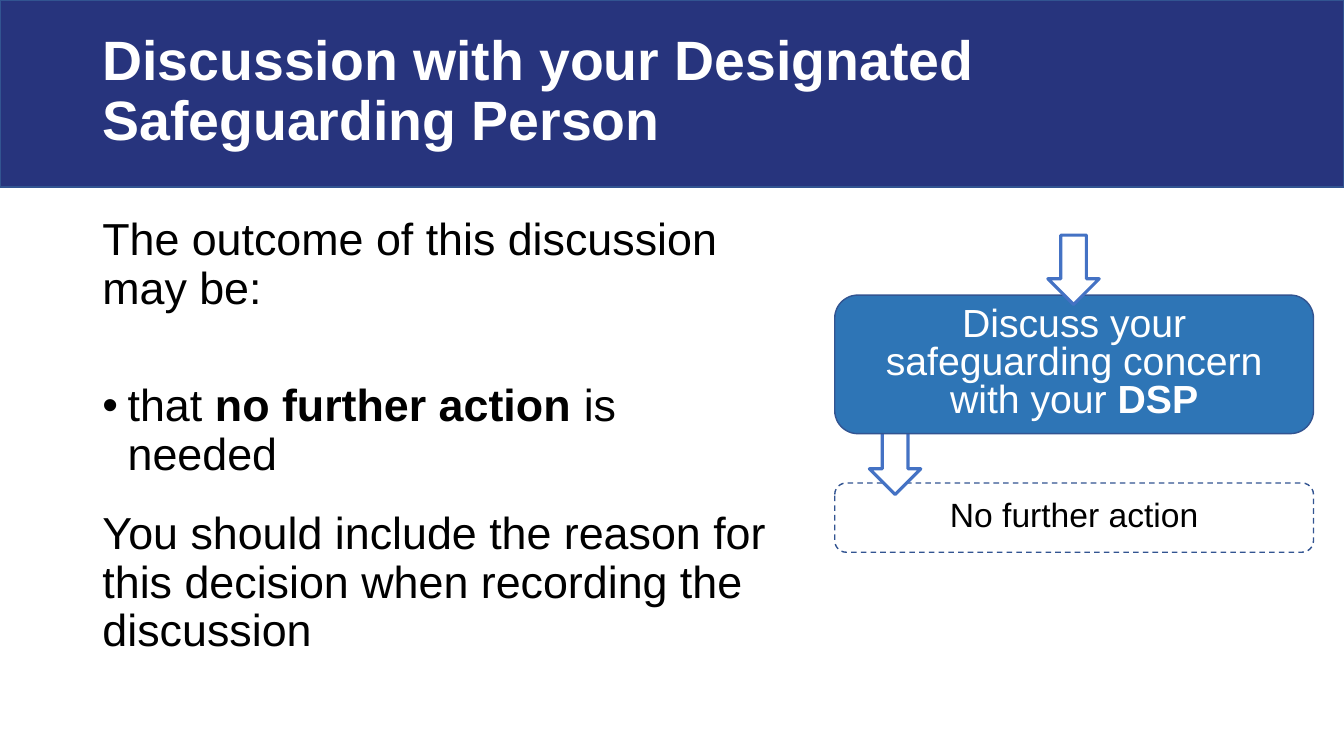
import pptx
import pptx.dml.color
import pptx.enum.dml
import pptx.enum.shapes
import pptx.enum.text
import pptx.util
from lxml import etree
from dataclasses import dataclass

EMU_PER_PX = 9525
SHAPE = pptx.enum.shapes.MSO_SHAPE
ALIGN = pptx.enum.text.PP_ALIGN
ANCHOR = pptx.enum.text.MSO_ANCHOR
DASH = pptx.enum.dml.MSO_LINE


@dataclass(frozen=True)
class Theme:
    font: str = "Arial"
    navy: str = "27347D"
    blue: str = "2E75B6"
    edge: str = "325491"
    arrow_edge: str = "4472C4"
    white: str = "FFFFFF"
    black: str = "000000"
    title_pt: float = 39.6
    body_pt: float = 32
    step_pt: float = 28
    outcome_pt: float = 24


THEME = Theme()


def px(n):
    return pptx.util.Emu(n * EMU_PER_PX)


def rgb(value):
    return pptx.dml.color.RGBColor.from_string(value)


def apply(target, formats):
    for name, value in formats.items():
        setattr(target, name, value)


def place(shape, box):
    apply(shape, dict(zip(("left", "top", "width", "height"), map(px, box))))


def add_shape(s, kind, box, fill, edge, weight=1, dash=None):
    shape = s.shapes.add_shape(kind, *map(px, box))
    shape.shadow.inherit = False
    shape.fill.solid()
    shape.fill.fore_color.rgb = rgb(fill)
    shape.line.color.rgb = rgb(edge)
    apply(shape.line, {"width": pptx.util.Pt(weight), "dash_style": dash})
    return shape


def setup_frame(tf, anchor):
    apply(tf, {"word_wrap": True, "vertical_anchor": anchor,
               "auto_size": pptx.enum.text.MSO_AUTO_SIZE.NONE})


def write(p, runs, size, color, align=ALIGN.LEFT, spacing=0.9, before=0, after=0):
    """Fill a paragraph with (text, bold) runs."""
    apply(p, {"alignment": align, "line_spacing": spacing,
              "space_before": pptx.util.Pt(before), "space_after": pptx.util.Pt(after)})
    for text, bold in runs:
        r = p.add_run()
        r.text = text
        apply(r.font, {"name": THEME.font, "size": pptx.util.Pt(size), "bold": bold})
        r.font.color.rgb = rgb(color)


def set_bullet(p, char=None, indent=0):
    pPr = p._p.get_or_add_pPr()
    pPr.set("marL", str(px(indent)))
    pPr.set("indent", str(px(-indent)))
    tag = pptx.oxml.ns.qn("a:buChar" if char else "a:buNone")
    bullet = etree.SubElement(pPr, tag)
    if char:
        bullet.set("char", char)


def add_header(s, box):
    x, y, w, h = box
    add_shape(s, SHAPE.RECTANGLE, box, THEME.navy, THEME.edge)
    title = s.shapes.title
    place(title, (x + 88, y + 17, 911, 142))
    setup_frame(title.text_frame, ANCHOR.MIDDLE)
    write(title.text_frame.paragraphs[0],
          [("Discussion with your Designated Safeguarding Person", True)],
          THEME.title_pt, THEME.white)
    # Bring the title in front of its banner
    title.element.getparent().append(title.element)


def add_outcomes(s, box):
    x, y, w, h = box
    # Lead-in sentence
    intro = s.shapes.add_textbox(*map(px, (x, y, w, 232)))
    setup_frame(intro.text_frame, ANCHOR.TOP)
    write(intro.text_frame.paragraphs[0],
          [("The outcome of this discussion may be:", False)],
          THEME.body_pt, THEME.black, after=12)

    # Outcome list, starting below the lead-in
    body = s.placeholders[1]
    place(body, (x, y + 77, w, h - 77))
    tf = body.text_frame
    setup_frame(tf, ANCHOR.TOP)
    tf.margin_top = px(86)
    bullet, note = tf.paragraphs[0], tf.add_paragraph()
    write(bullet,
          [("that ", False), ("no further action ", True), ("is needed", False)],
          THEME.body_pt, THEME.black, after=12)
    set_bullet(bullet, "•", 24)
    write(note,
          [("You should include the reason for this decision when recording the discussion",
            False)],
          THEME.body_pt, THEME.black, before=10, after=12)
    set_bullet(note)


def add_flow(s, box):
    x, y, w, h = box

    def add_step(top, height, fill, runs, size, color, dash=None):
        step = add_shape(s, SHAPE.ROUNDED_RECTANGLE, (x, y + top, w, height),
                         fill, THEME.edge, dash=dash)
        setup_frame(step.text_frame, ANCHOR.MIDDLE)
        write(step.text_frame.paragraphs[0], runs, size, color, ALIGN.CENTER, 0.8)

    def add_arrow(left, top):
        add_shape(s, SHAPE.DOWN_ARROW, (x + left, y + top, 49, 66),
                  THEME.white, THEME.arrow_edge, 2.25)

    # Back to front: outcome, its arrow, discussion step, its arrow
    add_step(h - 66, 66, THEME.white, [("No further action", False)],
             THEME.outcome_pt, THEME.black, DASH.DASH)
    add_arrow(33, 181)
    add_step(57, 132, THEME.blue,
             [("Discuss your safeguarding concern with your ", False), ("DSP", True)],
             THEME.step_pt, THEME.white)
    add_arrow(203, 0)


def main():
    prs = pptx.Presentation()
    apply(prs, {"slide_width": px(1280), "slide_height": px(720)})
    s = prs.slides.add_slide(prs.slide_layouts[1])
    add_header(s, (0, 0, 1280, 178))
    add_outcomes(s, (88, 202, 659, 441))
    add_flow(s, (795, 224, 456, 302))
    prs.save("out.pptx")


if __name__ == "__main__":
    main()
